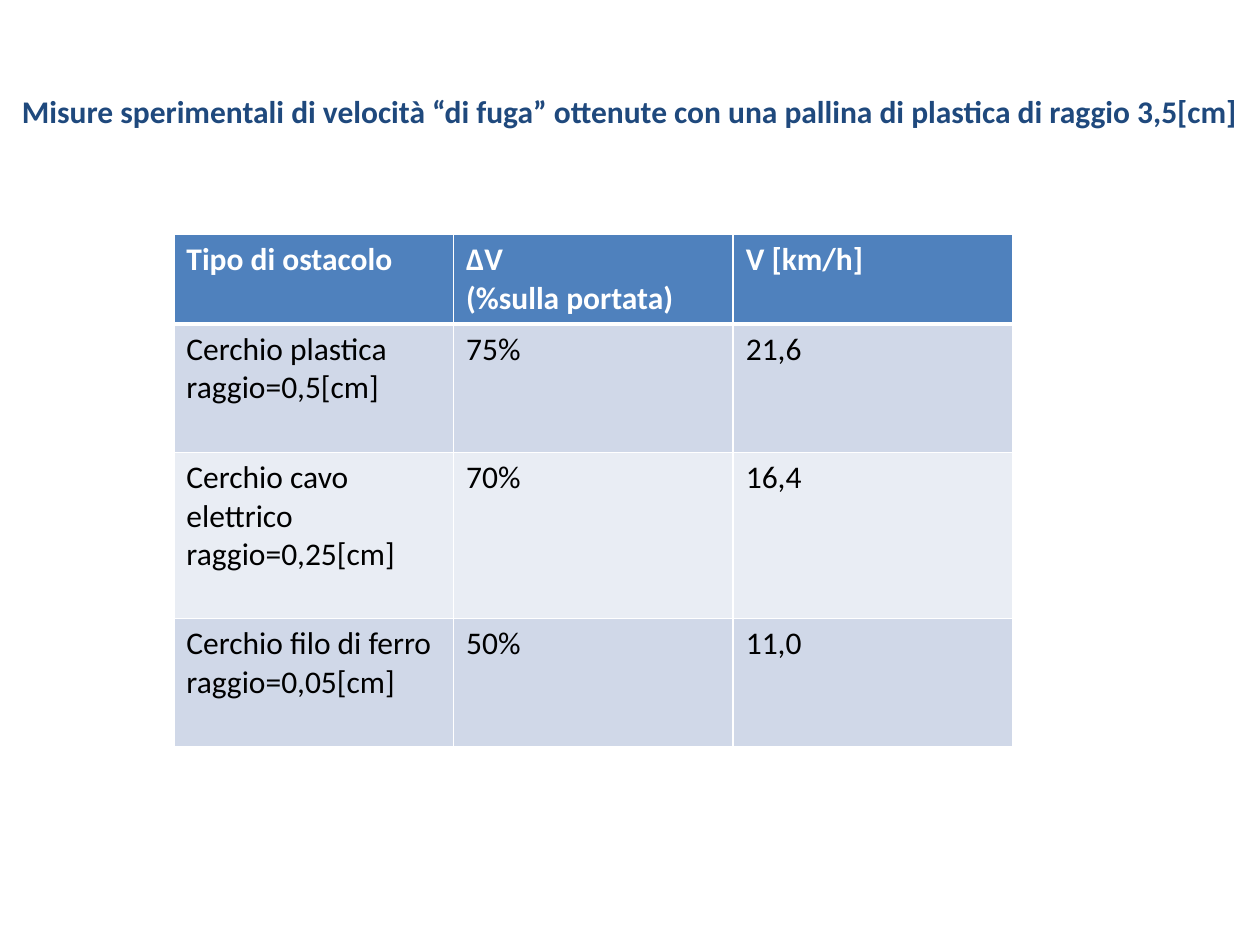
from lxml.etree import SubElement
from pptx import Presentation
from pptx.dml.color import RGBColor
from pptx.enum.text import MSO_ANCHOR, MSO_AUTO_SIZE, PP_ALIGN
from pptx.oxml.ns import qn
from pptx.util import Inches, Pt

TITLE = "Misure sperimentali di velocità “di fuga” ottenute con una pallina di plastica di raggio 3,5[cm]"
ROWS = [
    ("Tipo di ostacolo", "ΔV\n(%sulla portata)", "V [km/h]"),
    ("Cerchio plastica\nraggio=0,5[cm]", "75%", "21,6"),
    ("Cerchio cavo elettrico\nraggio=0,25[cm]", "70%", "16,4"),
    ("Cerchio filo di ferro\nraggio=0,05[cm]", "50%", "11,0"),
]
ROW_HEIGHTS = [0.7, 1.02, 1.32, 1.02]
COLUMN_WIDTH = 2.22
COLORS = {
    "title": "1F497D",
    "header": "4F81BD",
    "odd": "D0D8E8",
    "even": "E9EDF4",
    "body": "000000",
    "white": "FFFFFF",
}


def format_text(frame, color, bold):
    values = {"name": "Calibri", "size": Pt(18), "bold": bold}
    for para in frame.paragraphs:
        for span in para.runs:
            for name, value in values.items():
                setattr(span.font, name, value)
            span.font.color.rgb = RGBColor.from_string(COLORS[color])


def add_borders(cell, widths):
    properties = cell._tc.get_or_add_tcPr()
    for position, (side, width) in enumerate(widths.items()):
        line = properties.makeelement(qn(f"a:{side}"), {"w": str(Pt(width))})
        fill = SubElement(line, qn("a:solidFill"))
        SubElement(fill, qn("a:srgbClr"), val=COLORS["white"])
        properties.insert(position, line)


def add_title(page):
    title = page.shapes.title
    place = {"left": 0, "top": 0.68, "width": 10, "height": 0.4}
    for name, value in place.items():
        setattr(title, name, Inches(value))
    frame = title.text_frame
    frame.text = TITLE
    frame.word_wrap = True
    frame.auto_size = MSO_AUTO_SIZE.NONE
    frame.vertical_anchor = MSO_ANCHOR.MIDDLE
    frame.paragraphs[0].alignment = PP_ALIGN.CENTER
    format_text(frame, "title", True)


def add_results(page):
    columns = len(ROWS[0])
    table = page.shapes.add_table(
        len(ROWS), columns, Inches(1.38), Inches(1.86),
        Inches(COLUMN_WIDTH * columns), Inches(sum(ROW_HEIGHTS)),
    ).table
    for column in table.columns:
        column.width = Inches(COLUMN_WIDTH)
    for index, (texts, height) in enumerate(zip(ROWS, ROW_HEIGHTS)):
        table.rows[index].height = Inches(height)
        header = index == 0
        fill = "header" if header else ("odd" if index % 2 else "even")
        widths = {
            "lnL": 1,
            "lnR": 1,
            "lnT": 3 if index == 1 else 1,
            "lnB": 3 if header else 1,
        }
        for column, text in enumerate(texts):
            cell = table.cell(index, column)
            cell.text = text
            cell.fill.solid()
            cell.fill.fore_color.rgb = RGBColor.from_string(COLORS[fill])
            format_text(cell.text_frame, "white" if header else "body", header)
            add_borders(cell, widths)


def main():
    deck = Presentation()
    deck.slide_width, deck.slide_height = Inches(10), Inches(7.5)
    page = deck.slides.add_slide(deck.slide_layouts[5])
    add_title(page)
    add_results(page)
    deck.save("out.pptx")


if __name__ == "__main__":
    main()
